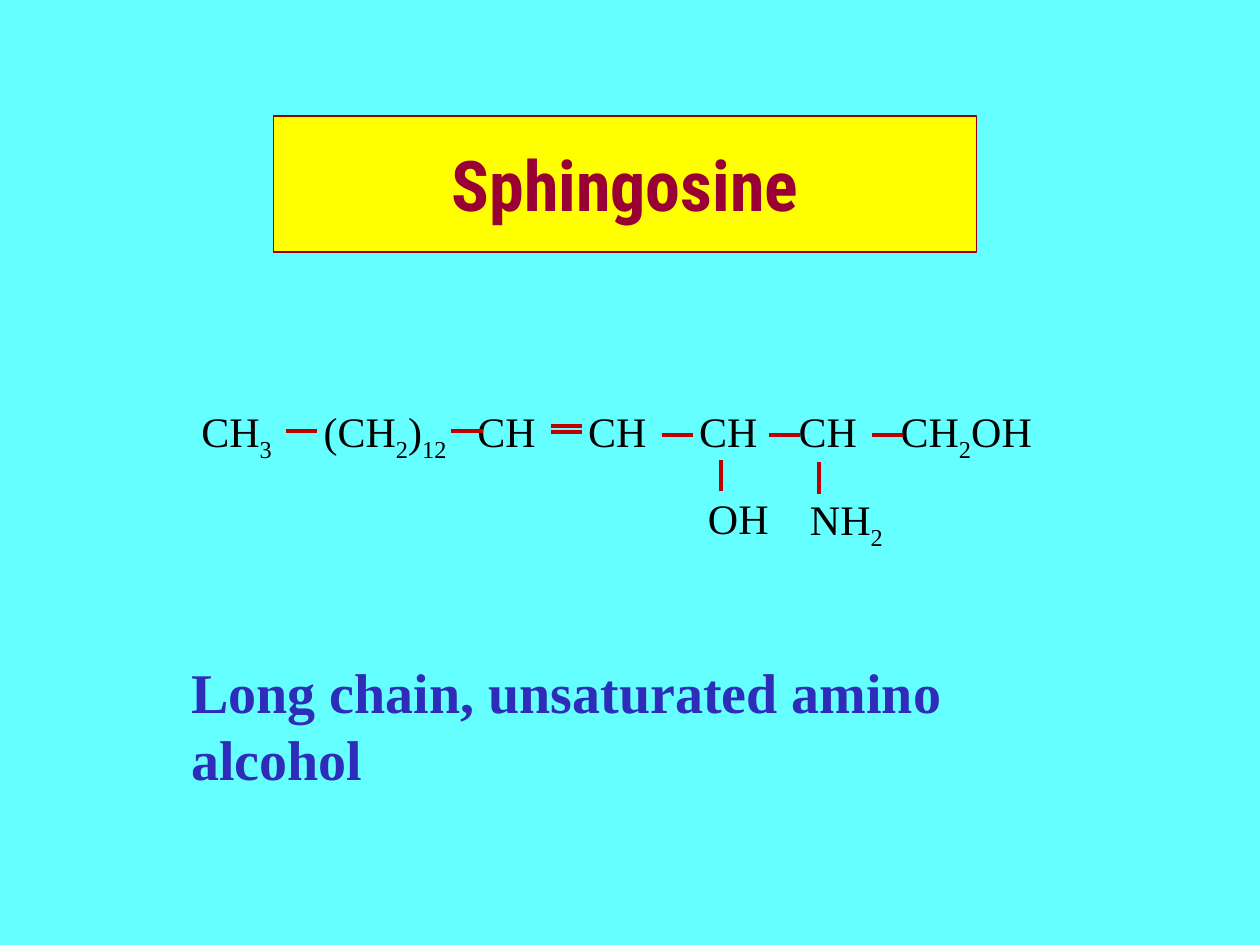
"""Build a slide showing the structural formula of sphingosine."""
from dataclasses import dataclass

import lxml.etree
import pptx
import pptx.dml.color
import pptx.enum.shapes
import pptx.enum.text
import pptx.oxml.ns
import pptx.util

Inches = pptx.util.Inches
RGBColor = pptx.dml.color.RGBColor
qn = pptx.oxml.ns.qn

CYAN = RGBColor(0x66, 0xFF, 0xFF)
YELLOW = RGBColor(0xFF, 0xFF, 0x00)
MAROON = RGBColor(0x99, 0x00, 0x00)
CRIMSON = RGBColor(0x99, 0x00, 0x33)
RED = RGBColor(0xC0, 0x00, 0x00)
BLUE = RGBColor(0x2D, 0x2D, 0xB9)
BLACK = RGBColor(0x00, 0x00, 0x00)

SERIF = "Times New Roman"
BOND_LENGTH = 0.25


@dataclass
class Label:
    text: str
    left: float
    top: float
    width: float
    height: float = 0.5
    size: int = 24
    color: RGBColor = BLACK
    bold: bool = False
    tabs: tuple[float, ...] = ()


@dataclass
class Bond:
    x: float
    y: float
    vertical: bool = False


LABELS = [
    Label("CH|3|\t(CH|2|)|12|\tCH\tCH\tCH\tCH\tCH|2|OH", 1.5, 3.17, 6.87,
          tabs=(0.97, 2.19, 3.07, 3.95, 4.74, 5.55)),
    Label("OH", 5.52, 3.86, 0.68),
    Label("NH|2", 6.33, 3.87, 0.8),
    Label("Long chain, unsaturated amino alcohol", 1.42, 5.17, 7.5,
          height=0.63, size=32, color=BLUE, bold=True),
]

BONDS = [
    Bond(2.27, 3.42),
    Bond(3.58, 3.42),
    Bond(4.37, 3.38),
    Bond(4.37, 3.43),
    Bond(5.25, 3.45),
    Bond(6.1, 3.45),
    Bond(6.92, 3.45),
    Bond(5.72, 3.65, vertical=True),
    Bond(6.5, 3.67, vertical=True),
]


def write(tf, text: str, *, size: int, color: RGBColor, font: str = SERIF,
          bold: bool = False, align=pptx.enum.text.PP_ALIGN.LEFT,
          tabs: tuple[float, ...] = ()) -> None:
    """Write text in which every second part between bars is a subscript."""
    tf.word_wrap = True
    p = tf.paragraphs[0]
    p.alignment = align
    if tabs:
        tab_list = lxml.etree.SubElement(p._p.get_or_add_pPr(), qn("a:tabLst"))
        for tab in tabs:
            lxml.etree.SubElement(tab_list, qn("a:tab"),
                                  pos=str(Inches(tab)), algn="l")
    for i, part in enumerate(text.split("|")):
        r = p.add_run()
        r.text = part
        r.font.name = font
        r.font.size = pptx.util.Pt(size)
        r.font.bold = bold
        r.font.color.rgb = color
        if i % 2:
            r._r.get_or_add_rPr().set("baseline", "-25000")


def add_title(s, text: str) -> None:
    """Place and format the title placeholder."""
    sp = s.shapes.title
    sp.left, sp.top = Inches(2.17), Inches(0.92)
    sp.width, sp.height = Inches(5.58), Inches(1.08)
    sp.fill.solid()
    sp.fill.fore_color.rgb = YELLOW
    sp.line.color.rgb = MAROON
    sp.line.width = pptx.util.Pt(0.75)
    sp.text_frame.vertical_anchor = pptx.enum.text.MSO_ANCHOR.MIDDLE
    write(sp.text_frame, text, size=40, color=CRIMSON, font="Roboto Condensed",
          bold=True, align=pptx.enum.text.PP_ALIGN.CENTER)


def add_label(s, label: Label) -> None:
    """Add one text box."""
    sp = s.shapes.add_textbox(Inches(label.left), Inches(label.top),
                              Inches(label.width), Inches(label.height))
    write(sp.text_frame, label.text, size=label.size, color=label.color,
          bold=label.bold, tabs=label.tabs)


def add_bond(s, bond: Bond) -> None:
    """Add one bond of the standard length."""
    dx, dy = (0, BOND_LENGTH) if bond.vertical else (BOND_LENGTH, 0)
    sp = s.shapes.add_connector(
        pptx.enum.shapes.MSO_CONNECTOR.STRAIGHT, Inches(bond.x), Inches(bond.y),
        Inches(bond.x + dx), Inches(bond.y + dy))
    sp.line.color.rgb = RED
    sp.line.width = pptx.util.Pt(2.25)
    lxml.etree.SubElement(sp._element.spPr, qn("a:effectLst"))


def main() -> None:
    """Build and save the slide."""
    prs = pptx.Presentation()
    prs.slide_width, prs.slide_height = Inches(10), Inches(7.5)
    s = prs.slides.add_slide(prs.slide_layouts[5])
    s.background.fill.solid()
    s.background.fill.fore_color.rgb = CYAN
    add_title(s, "Sphingosine")
    for label in LABELS:
        add_label(s, label)
    for bond in BONDS:
        add_bond(s, bond)
    prs.save("out.pptx")


if __name__ == "__main__":
    main()
